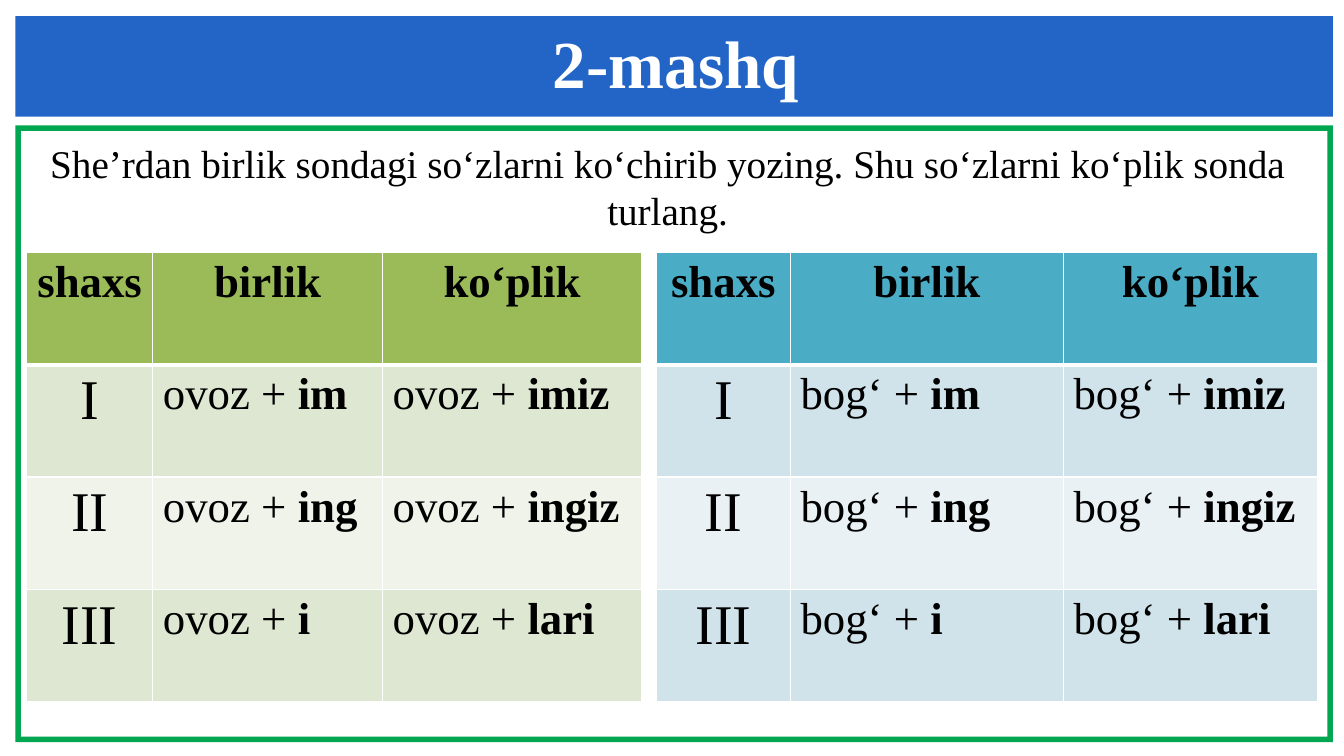
from lxml import etree
from pptx import Presentation
from pptx.dml.color import RGBColor
from pptx.enum.shapes import MSO_SHAPE
from pptx.enum.text import PP_ALIGN
from pptx.oxml.ns import qn
from pptx.util import Cm, Pt

RECTANGLE, FRAME = MSO_SHAPE.RECTANGLE, MSO_SHAPE.FRAME
LEFT, CENTER = PP_ALIGN.LEFT, PP_ALIGN.CENTER

HEADERS = ["shaxs", "birlik", "ko‘plik"]
ENDINGS = [("I", "im", "imiz"), ("II", "ing", "ingiz"), ("III", "i", "lari")]


def rgb(value):
    return RGBColor.from_string(value)


class SlideBuilder:
    font = "Times New Roman"
    black = "000000"
    white = "FFFFFF"
    row_height = 2.83

    def __init__(self, slide):
        self.slide = slide

    def shape(self, kind, box, color):
        sp = self.slide.shapes.add_shape(kind, *map(Cm, box))
        sp.shadow.inherit = False
        sp.fill.solid()
        sp.fill.fore_color.rgb = rgb(color)
        sp.line.fill.background()
        return sp

    def style(self, p, size, color, align, bold=None):
        p.alignment = align
        p.font.name = self.font
        p.font.size = Pt(size)
        p.font.color.rgb = rgb(color)
        p.font.bold = bold

    def text(self, box, text, size, color, bold=False):
        tf = self.slide.shapes.add_textbox(*map(Cm, box)).text_frame
        tf.word_wrap = True
        p = tf.paragraphs[0]
        p.text = text
        self.style(p, size, color, CENTER, bold)

    def borders(self, cell, top, bottom):
        tc_pr = cell._tc.get_or_add_tcPr()
        for side, width in (("L", 1), ("R", 1), ("T", top), ("B", bottom)):
            ln = etree.SubElement(tc_pr, qn(f"a:ln{side}"), w=str(Pt(width)))
            fill = etree.SubElement(ln, qn("a:solidFill"))
            etree.SubElement(fill, qn("a:srgbClr"), val=self.white)

    def cell(self, cell, runs, size, align, fill, top, bottom):
        self.borders(cell, top, bottom)
        cell.fill.solid()
        cell.fill.fore_color.rgb = rgb(fill)
        p = cell.text_frame.paragraphs[0]
        for text, bold in runs:
            r = p.add_run()
            r.text = text
            r.font.bold = bold
        self.style(p, size, self.black, align)

    def suffix_table(self, left, top, widths, stem, header_fill, bands):
        count = len(ENDINGS) + 1
        table = self.slide.shapes.add_table(
            count, len(widths), Cm(left), Cm(top),
            Cm(sum(widths)), Cm(self.row_height * count)).table
        for column, width in zip(table.columns, widths):
            column.width = Cm(width)
        for row in table.rows:
            row.height = Cm(self.row_height)
        for j, header in enumerate(HEADERS):
            self.cell(table.cell(0, j), [(header, True)], 32, CENTER, header_fill, 1, 3)
        for i, (person, *suffixes) in enumerate(ENDINGS, 1):
            fill = bands[(i - 1) % 2]
            line = 3 if i == 1 else 1
            self.cell(table.cell(i, 0), [(person, False)], 40, CENTER, fill, line, 1)
            for j, suffix in enumerate(suffixes, 1):
                runs = [(f"{stem} + ", False), (suffix, True)]
                self.cell(table.cell(i, j), runs, 32, LEFT, fill, line, 1)


def main():
    prs = Presentation()
    prs.slide_width, prs.slide_height = Cm(33.87), Cm(19.05)
    s = SlideBuilder(prs.slides.add_slide(prs.slide_layouts[6]))

    frame = s.shape(FRAME, (0.39, 3.16, 33.2, 15.54), "00A650")
    frame.adjustments[0] = 0.009
    s.shape(RECTANGLE, (0.39, 0.41, 33.2, 2.53), "2365C7")
    s.text((3.84, 0.41, 26.39, 2.31), "2-mashq", 48, s.white, bold=True)
    s.text((0.66, 3.38, 32.33, 2.64),
           "She’rdan birlik sondagi so‘zlarni ko‘chirib yozing. "
           "Shu so‘zlarni ko‘plik sonda turlang.", 28, s.black)
    s.suffix_table(0.67, 6.36, (3.18, 5.79, 6.53), "ovoz", "9BBB59", ("DEE7D1", "EFF3EA"))
    s.suffix_table(16.54, 6.36, (3.38, 6.88, 6.4), "bog‘", "4BACC6", ("D0E3EA", "E9F1F5"))

    prs.save("out.pptx")


if __name__ == "__main__":
    main()
